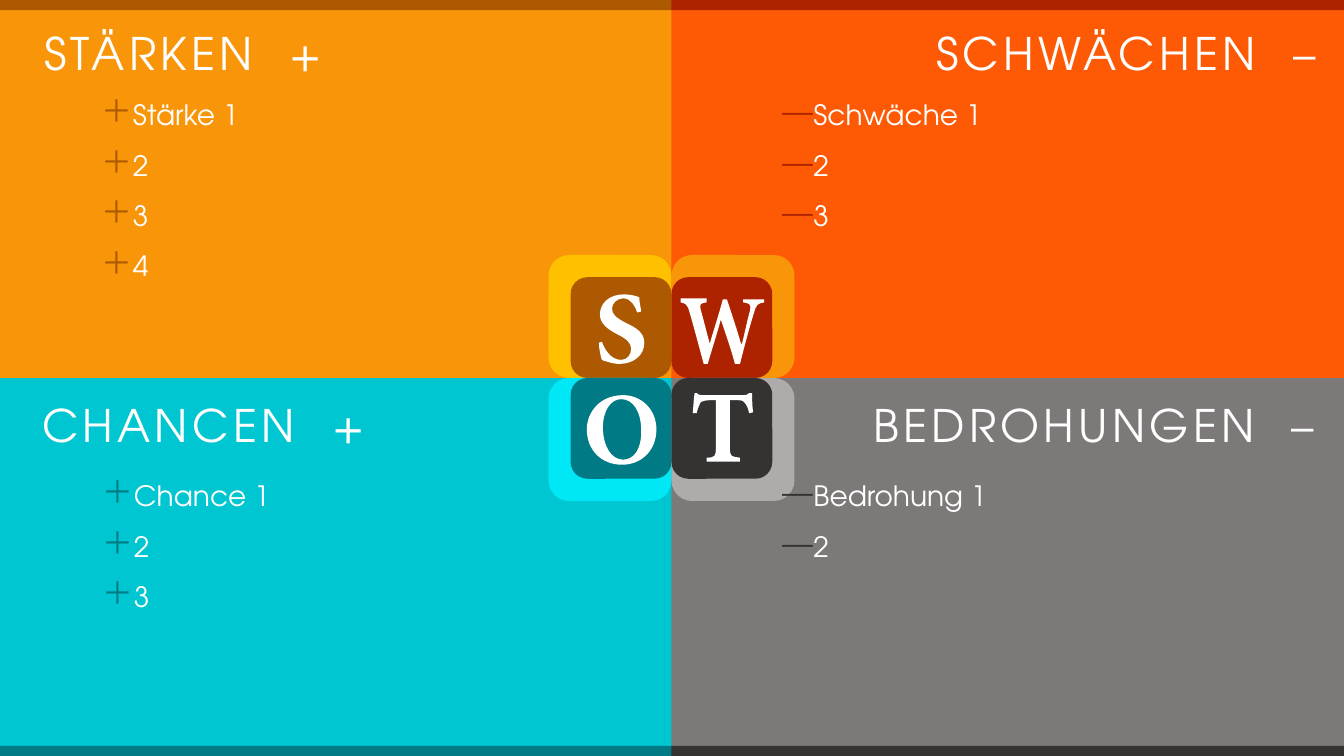
from dataclasses import dataclass

from lxml.etree import SubElement
from pptx import Presentation
from pptx.dml.color import RGBColor
from pptx.enum.shapes import MSO_SHAPE as Preset
from pptx.enum.text import MSO_AUTO_SIZE as AutoSize, PP_ALIGN as Align
from pptx.oxml.ns import qn
from pptx.util import Inches, Pt


@dataclass(frozen=True)
class Theme:
    font: str = "TeX Gyre Adventor"
    text: str = "FFFFFF"
    background: str = "F9F9F9"
    heading_size: int = 32
    item_size: int = 20
    letter_spacing: int = 3
    item_gap: int = 12


@dataclass(frozen=True)
class Quadrant:
    heading: str
    items: tuple
    bullet: str
    fill: str
    dark: str
    halo: str
    column: int
    row: int
    heading_box: tuple
    list_box: tuple
    letter: str


THEME = Theme()
WIDTH, HEIGHT = 13.33, 7.5
HALF_WIDTH, HALF_HEIGHT = 6.67, 3.75
CENTER = WIDTH - HALF_WIDTH
HALO, TILE, STRIP = 1.22, 1, 0.1
INDENT = 0.31

# Letter outlines in hundredths of an inch: M moves, L draws a line, C a cubic curve.
LETTER_S = """M 632 310 C 630 304 626 296 618 296 C 612 296 607 301 607 306
C 607 312 611 315 620 320 C 631 325 639 330 639 340 C 639 352 629 361 614 361
C 610 361 606 360 603 359 C 600 358 598 358 597 357 C 596 355 594 346 594 340
L 597 339 C 599 345 605 357 616 357 C 622 357 626 352 626 346
C 626 340 621 336 613 332 C 603 327 595 321 595 312 C 595 301 604 292 619 292
C 626 292 632 294 634 295 C 634 299 635 303 636 309 L 632 310"""
LETTER_W = """M 758 300 C 752 301 750 302 748 310 C 746 316 741 333 734 361 L 729 361
C 725 346 720 332 715 317 L 715 317 C 711 332 706 347 702 361 L 698 361
C 693 343 689 327 684 310 C 682 302 680 301 675 300 L 675 296 L 701 296 L 701 300
C 694 301 694 302 695 307 C 698 318 701 330 704 341 L 704 341 C 708 327 713 312 717 297
L 721 297 C 726 312 731 327 735 341 L 736 341 C 739 329 742 314 744 308
C 745 302 744 301 737 300 L 737 297 L 758 297 L 758 300"""
LETTER_O = """M 651 426 C 651 447 636 461 617 461 C 596 461 582 446 582 426
C 582 409 595 392 618 392 C 636 392 651 406 651 426
M 598 424 C 598 442 606 456 618 456 C 628 456 636 447 636 428
C 636 408 628 396 616 396 C 606 396 598 407 598 424"""
LETTER_T = """M 743 410 C 742 404 740 401 738 399 C 737 397 734 397 728 397 L 724 397
L 724 444 C 724 453 725 453 734 454 L 734 458 L 701 458 L 701 454
C 709 454 710 453 710 444 L 710 397 L 707 397 C 698 397 697 398 695 399
C 694 401 692 405 691 410 L 687 410 C 688 402 688 395 689 390 L 691 390
C 693 392 694 392 697 392 L 737 392 C 740 392 741 392 743 390 L 746 390
C 746 394 746 403 747 409 L 743 410"""

QUADRANTS = (
    Quadrant("STÄRKEN  +", ("Stärke 1", "2", "3", "4"), "＋", "F99509", "AD5902", "FFC000",
             0, 0, (0.34, 0.21, 4.57, 0.64), (0.91, 0.92, 5.6, 1.95), LETTER_S),
    Quadrant("SCHWÄCHEN  –", ("Schwäche 1", "2", "3"), "—", "FE5A05", "AD2300", "F99509",
             1, 0, (8.42, 0.21, 4.73, 0.64), (7.66, 0.92, 5.32, 1.45), LETTER_W),
    Quadrant("CHANCEN  +", ("Chance 1", "2", "3"), "＋", "00C6D1", "007A84", "00E8F6",
             0, 1, (0.32, 3.9, 5.3, 0.64), (0.92, 4.7, 5.6, 1.45), LETTER_O),
    Quadrant("BEDROHUNGEN  –", ("Bedrohung 1", "2"), "—", "7E7979", "353232", "AFABAB",
             1, 1, (8.21, 3.9, 4.93, 0.64), (7.66, 4.7, 5.3, 0.94), LETTER_T),
)


def paint(shape, color):
    shape.shadow.inherit = False
    shape.fill.solid()
    shape.fill.fore_color.rgb = RGBColor.from_string(color)
    shape.line.fill.background()


def add_block(slide, preset, box, color):
    paint(slide.shapes.add_shape(preset, *map(Inches, box)), color)


def add_field(slide, quadrant):
    box = (quadrant.column * CENTER, quadrant.row * HALF_HEIGHT, HALF_WIDTH, HALF_HEIGHT)
    add_block(slide, Preset.RECTANGLE, box, quadrant.fill)


def add_strip(slide, quadrant):
    box = (quadrant.column * CENTER, quadrant.row * (HEIGHT - STRIP), HALF_WIDTH, STRIP)
    add_block(slide, Preset.RECTANGLE, box, quadrant.dark)


def add_center_tile(slide, quadrant, size, color):
    """Rounded square with one corner on the slide's centre."""
    box = (CENTER - size * (1 - quadrant.column),
           HALF_HEIGHT - size * (1 - quadrant.row), size, size)
    add_block(slide, Preset.ROUNDED_RECTANGLE, box, color)


def read_contour(outline):
    """Start point, then the points of each segment: one for a line, three for a curve."""
    tokens = iter(outline.split())

    def next_point():
        return Inches(int(next(tokens)) / 100), Inches(int(next(tokens)) / 100)

    start = next_point()
    segments = [[next_point() for _ in range(3 if command == "C" else 1)]
                for command in tokens]
    return start, segments


def bend(line, points, left, top):
    """Turn a straight path segment into a cubic curve."""
    curve = line.makeelement(qn("a:cubicBezTo"), {})
    for x, y in points:
        SubElement(curve, qn("a:pt"), x=str(x - left), y=str(y - top))
    line.getparent().replace(line, curve)


def add_letter(slide, outline):
    contours = [read_contour(part) for part in outline.split("M")[1:]]
    builder = slide.shapes.build_freeform(*contours[0][0])
    for index, (start, segments) in enumerate(contours):
        if index:
            builder.move_to(*start)
        builder.add_line_segments([points[-1] for points in segments], close=True)
    letter = builder.convert_to_shape()
    lines = list(letter._element.iter(qn("a:lnTo")))
    all_segments = [points for _, segments in contours for points in segments]
    for line, points in zip(lines, all_segments):
        if len(points) == 3:
            bend(line, points, letter.left, letter.top)
    paint(letter, THEME.text)


def add_text(slide, box, lines, size):
    """Text box with one paragraph per line; returns the paragraphs."""
    frame = slide.shapes.add_textbox(*map(Inches, box)).text_frame
    frame.word_wrap = True
    frame.auto_size = AutoSize.SHAPE_TO_FIT_TEXT
    frame.text = "\n".join(lines)
    for paragraph in frame.paragraphs:
        paragraph.font.name = THEME.font
        paragraph.font.size = Pt(size)
        paragraph.font.color.rgb = RGBColor.from_string(THEME.text)
    return frame.paragraphs


def add_heading(slide, quadrant):
    heading, = add_text(slide, quadrant.heading_box, [quadrant.heading], THEME.heading_size)
    heading.alignment = Align.RIGHT if quadrant.column else Align.LEFT
    heading.runs[0].font._element.set("spc", str(THEME.letter_spacing * 100))


def set_bullet(paragraph, mark, color):
    properties = paragraph._p.get_or_add_pPr()
    properties.set("marL", str(Inches(INDENT)))
    properties.set("indent", str(-Inches(INDENT)))
    bullet_color = properties.makeelement(qn("a:buClr"), {})
    SubElement(bullet_color, qn("a:srgbClr"), val=color)
    bullet_size = properties.makeelement(qn("a:buSzPct"), {"val": "110000"})
    bullet_font = properties.makeelement(qn("a:buFont"), {"typeface": THEME.font})
    bullet_mark = properties.makeelement(qn("a:buChar"), {"char": mark})
    run_defaults = properties.find(qn("a:defRPr"))
    for part in (bullet_color, bullet_size, bullet_font, bullet_mark):
        run_defaults.addprevious(part)


def add_items(slide, quadrant):
    for item in add_text(slide, quadrant.list_box, quadrant.items, THEME.item_size):
        item.space_after = Pt(THEME.item_gap)
        set_bullet(item, quadrant.bullet, quadrant.dark)


def main():
    deck = Presentation()
    deck.slide_width, deck.slide_height = Inches(WIDTH), Inches(HEIGHT)
    slide = deck.slides.add_slide(deck.slide_layouts[6])
    slide.background.fill.solid()
    slide.background.fill.fore_color.rgb = RGBColor.from_string(THEME.background)
    for quadrant in QUADRANTS:
        add_field(slide, quadrant)
    for quadrant in QUADRANTS:
        add_center_tile(slide, quadrant, HALO, quadrant.halo)
        add_items(slide, quadrant)
        add_heading(slide, quadrant)
        add_center_tile(slide, quadrant, TILE, quadrant.dark)
        add_letter(slide, quadrant.letter)
        add_strip(slide, quadrant)
    deck.save("out.pptx")


if __name__ == "__main__":
    main()
